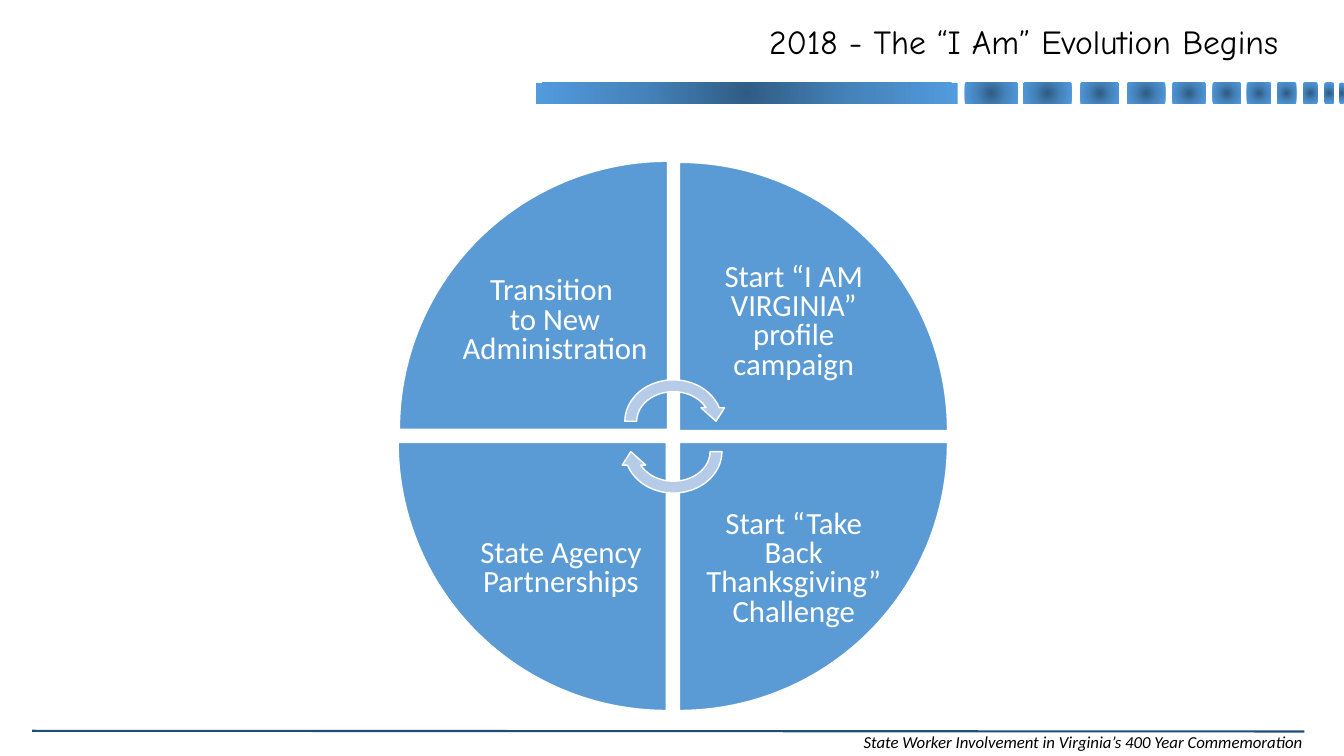
from lxml import etree
from pptx import Presentation
from pptx.dml.color import RGBColor
from pptx.enum.shapes import MSO_CONNECTOR, MSO_SHAPE
from pptx.enum.text import MSO_ANCHOR as ANCHOR, MSO_AUTO_SIZE as AUTO, PP_ALIGN as ALIGN
from pptx.oxml import parse_xml
from pptx.oxml.ns import nsdecls, qn
from pptx.util import Pt

BLACK = RGBColor(0x00, 0x00, 0x00)
WHITE = RGBColor(0xFF, 0xFF, 0xFF)
NAVY = RGBColor(0x1F, 0x4E, 0x79)
BLUE = RGBColor(0x5B, 0x9B, 0xD5)
PALE_BLUE = RGBColor(0xB5, 0xCB, 0xE7)
BAR_STOPS = ((0, RGBColor(0x30, 0x5C, 0x84)), (50, RGBColor(0x45, 0x83, 0xBB)),
             (100, RGBColor(0x52, 0x9B, 0xDE)))

# left and width of each tile in the header bar
BAR_TOP, BAR_HEIGHT = 59, 15.2
BAR_TILES = ((383, 301), (689, 38.2), (730.8, 34.6), (771.8, 27.4), (805, 27.4),
             (837.4, 23.8), (866.2, 20.2), (890.6, 17.3), (912.2, 13.7),
             (931, 10.1), (946.1, 6.5), (956.9, 2.9))

# clockwise from top left: wedge left and top, label left, top and width, wording
WEDGE_SIZE, LABEL_HEIGHT = 191.5, 135.4
QUARTERS = (
    (285.3, 115.2, 315.4, 162, 162, "Transition \vto New Administration"),
    (485.3, 116, 492.5, 162.7, 149, "Start “I AM VIRGINIA” profile campaign"),
    (485.3, 316, 492.5, 339.1, 149, "Start “Take Back Thanksgiving” Challenge"),
    (284.4, 316, 326.2, 339.1, 149, "State Agency Partnerships"),
)
ARROWS = ((267.1, 0), (288.7, 180))


class SlideBuilder:
    body_font = "Calibri"
    title_font = "Comic Neue"

    def __init__(self, prs):
        self.slide = prs.slides.add_slide(prs.slide_layouts[6])

    def shape(self, kind, left, top, width, height, fill, rotation=0):
        """Add a flat shape with a thin white outline."""
        sp = self.slide.shapes.add_shape(kind, Pt(left), Pt(top), Pt(width), Pt(height))
        sp.shadow.inherit = False
        sp.rotation = rotation
        sp.fill.solid()
        sp.fill.fore_color.rgb = fill
        sp.line.color.rgb = WHITE
        sp.line.width = Pt(1)

    def gradient_tile(self, left, top, width, height):
        """Add a borderless rectangle shaded outwards from its centre."""
        sp = self.slide.shapes.add_shape(
            MSO_SHAPE.RECTANGLE, Pt(left), Pt(top), Pt(width), Pt(height))
        sp.shadow.inherit = False
        sp.line.fill.background()
        stops = "".join(f'<a:gs pos="{pos * 1000}"><a:srgbClr val="{color}"/></a:gs>'
                        for pos, color in BAR_STOPS)
        gradient = parse_xml(
            f'<a:gradFill {nsdecls("a")} rotWithShape="1"><a:gsLst>{stops}</a:gsLst>'
            '<a:path path="circle"><a:fillToRect l="50000" t="50000" r="50000" b="50000"/>'
            '</a:path></a:gradFill>')
        sp._element.spPr.find(qn("a:prstGeom")).addnext(gradient)

    def line(self, x1, y1, x2, y2, color, width):
        cx = self.slide.shapes.add_connector(
            MSO_CONNECTOR.STRAIGHT, Pt(x1), Pt(y1), Pt(x2), Pt(y2))
        cx.line.color.rgb = color
        cx.line.width = Pt(width)
        etree.SubElement(cx._element.spPr, qn("a:effectLst"))

    def text(self, text, left, top, width, height, size, color=BLACK, font=body_font,
             italic=False):
        """Add a one-line text box and return its text frame."""
        box = self.slide.shapes.add_textbox(Pt(left), Pt(top), Pt(width), Pt(height))
        tf = box.text_frame
        tf.word_wrap = False
        tf.auto_size = AUTO.SHAPE_TO_FIT_TEXT
        tf.text = text
        for r in tf.paragraphs[0].runs:
            r.font.size = Pt(size)
            r.font.name = font
            r.font.italic = italic
            r.font.color.rgb = color
        return tf

    def label(self, text, left, top, width, height):
        """Add wrapped, centred white text for a wedge."""
        tf = self.text(text, left, top, width, height, 22, WHITE)
        tf.auto_size = AUTO.NONE
        tf.word_wrap = True
        tf.vertical_anchor = ANCHOR.MIDDLE
        tf.margin_left = tf.margin_right = tf.margin_top = tf.margin_bottom = Pt(11.5)
        p = tf.paragraphs[0]
        p.alignment = ALIGN.CENTER
        p.line_spacing = Pt(21)


def main():
    prs = Presentation()
    prs.slide_width, prs.slide_height = Pt(960), Pt(540)
    s = SlideBuilder(prs)

    for left, width in BAR_TILES:
        s.gradient_tile(left, BAR_TOP, width, BAR_HEIGHT)
    s.line(23, 522, 931.7, 522.5, NAVY, 1.5)
    s.text("State Worker Involvement in Virginia’s 400 Year Commemoration",
           609.8, 519.1, 331.2, 21.6, 12, italic=True)
    s.text("2018 - The “I Am” Evolution Begins", 542.2, 11.5, 402.5, 36, 24,
           font=s.title_font)

    for i, (left, top, label_left, label_top, label_width, text) in enumerate(QUARTERS):
        s.shape(MSO_SHAPE.PIE_WEDGE, left, top, WEDGE_SIZE, WEDGE_SIZE, BLUE, 90 * i)
        s.label(text, label_left, label_top, label_width, LABEL_HEIGHT)
    for top, rotation in ARROWS:
        s.shape(MSO_SHAPE.CIRCULAR_ARROW, 442.1, top, 77.8, 67.7, PALE_BLUE, rotation)

    prs.save("out.pptx")


if __name__ == "__main__":
    main()
